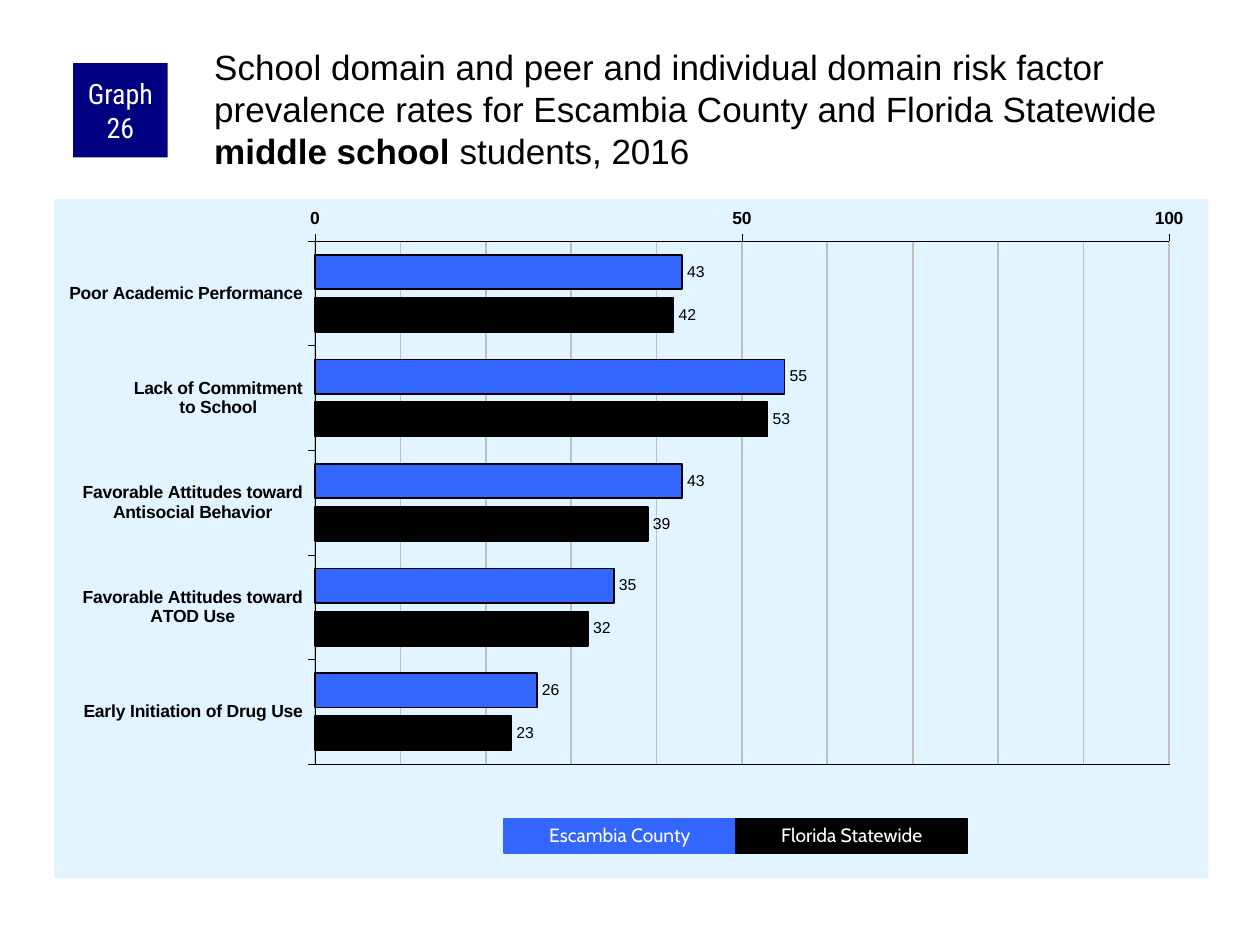
from copy import deepcopy

from pptx import Presentation
from pptx.chart.data import CategoryChartData
from pptx.dml.color import RGBColor
from pptx.enum.chart import XL_AXIS_CROSSES, XL_CHART_TYPE, XL_LABEL_POSITION, XL_TICK_MARK
from pptx.enum.shapes import MSO_SHAPE
from pptx.enum.text import MSO_ANCHOR, MSO_AUTO_SIZE, PP_ALIGN
from pptx.oxml import parse_xml
from pptx.oxml.ns import nsdecls, qn
from pptx.util import Inches, Pt

COLORS = {
    "county": "3366FF", "state": "000000", "panel": "E1F4FF", "badge": "000080",
    "grid": "C0C0C0", "ink": "000000", "light": "FFFFFF",
}
RISK_FACTORS = [
    "Poor Academic Performance",
    "Lack of Commitment\nto School",
    "Favorable Attitudes toward\nAntisocial Behavior",
    "Favorable Attitudes toward\nATOD Use",
    "Early Initiation of Drug Use",
]
GROUPS = [
    ("Escambia County", "county", (43, 55, 43, 35, 26)),
    ("Florida Statewide", "state", (42, 53, 39, 32, 23)),
]
PLOT_LAYOUT = {"x": 0.226, "y": 0.062, "w": 0.74, "h": 0.77}


def rgb(color):
    return RGBColor.from_string(COLORS[color])


def set_values(target, values):
    for attribute, value in values.items():
        setattr(target, attribute, value)


def style_font(font, size, name="Arial", color="ink", bold=False):
    set_values(font, {"size": Pt(size), "name": name, "bold": bold})
    font.color.rgb = rgb(color)


def style_line(line, color, width):
    line.color.rgb = rgb(color)
    line.width = Pt(width)


def area_format(fill, line):
    return parse_xml(f'<c:spPr {nsdecls("c", "a")}>{fill}<a:ln{line}</a:ln></c:spPr>')


def add_title(slide):
    title = slide.shapes.title
    set_values(title, {"left": Inches(1.67), "top": Inches(0.33),
                       "width": Inches(7.92), "height": Inches(0.83)})
    frame = title.text_frame
    set_values(frame, {
        "word_wrap": True, "auto_size": MSO_AUTO_SIZE.NONE, "vertical_anchor": MSO_ANCHOR.TOP,
        "margin_left": Inches(0.03), "margin_top": Inches(0.03),
        "margin_right": 0, "margin_bottom": 0,
    })
    paragraph = frame.paragraphs[0]
    paragraph.alignment = PP_ALIGN.LEFT
    for text, bold in (
        ("School domain and peer and individual domain risk factor prevalence rates "
         "for Escambia County and Florida Statewide ", False),
        ("middle school", True),
        (" students, 2016", False),
    ):
        run = paragraph.add_run()
        run.text = text
        style_font(run.font, 20, bold=bold)


def add_label_box(slide, text, box, fill, size, font, frame_format, spacing=None):
    label = slide.shapes.add_shape(MSO_SHAPE.RECTANGLE, *(Inches(v) for v in box))
    label.shadow.inherit = False
    label.fill.solid()
    label.fill.fore_color.rgb = rgb(fill)
    style_line(label.line, fill, 0.75)
    set_values(label.text_frame, {"word_wrap": True, "vertical_anchor": MSO_ANCHOR.MIDDLE,
                                  **frame_format})
    paragraph = label.text_frame.paragraphs[0]
    set_values(paragraph, {"alignment": PP_ALIGN.CENTER, "line_spacing": spacing})
    run = paragraph.add_run()
    run.text = text
    style_font(run.font, size, font, "light")
    return label


def style_axes(chart):
    for axis in (chart.category_axis, chart.value_axis):
        set_values(axis, {"major_tick_mark": XL_TICK_MARK.OUTSIDE,
                          "minor_tick_mark": XL_TICK_MARK.NONE})
        style_font(axis.tick_labels.font, 10, bold=True)
        style_line(axis.format.line, "ink", 0.25)
    set_values(chart.category_axis, {"reverse_order": True, "crosses": XL_AXIS_CROSSES.MAXIMUM})
    rates = chart.value_axis
    set_values(rates, {
        "minimum_scale": 0, "maximum_scale": 100, "major_unit": 50, "minor_unit": 10,
        "has_major_gridlines": True, "has_minor_gridlines": True,
    })
    style_line(rates.major_gridlines.format.line, "grid", 1)
    major, minor = (next(chart.element.iter(qn(tag)))
                    for tag in ("c:majorGridlines", "c:minorGridlines"))
    minor.append(deepcopy(major.find(qn("c:spPr"))))


def style_bars(chart):
    plot = chart.plots[0]
    set_values(plot, {"gap_width": 80, "overlap": -25, "vary_by_categories": False})
    for bars, (_, color, _) in zip(plot.series, GROUPS):
        bars.format.fill.solid()
        bars.format.fill.fore_color.rgb = rgb(color)
        bars.invert_if_negative = False
        style_line(bars.format.line, "ink", 1)
        labels = bars.data_labels
        set_values(labels, {"show_value": True, "position": XL_LABEL_POSITION.OUTSIDE_END})
        style_font(labels.font, 9)


def style_areas(chart):
    """Fill the chart panel, frame the plot and fix its inner position."""
    chart_body = chart.element.find(qn("c:chart"))
    panel = f'<a:solidFill><a:srgbClr val="{COLORS["panel"]}"/></a:solidFill>'
    chart_body.addnext(area_format(panel, "><a:noFill/>"))
    plot_area = chart_body.find(qn("c:plotArea"))
    frame = f' w="3175"><a:solidFill><a:srgbClr val="{COLORS["ink"]}"/></a:solidFill>'
    plot_area.append(area_format("<a:noFill/>", frame))
    for default_layout in plot_area.findall(qn("c:layout")):
        plot_area.remove(default_layout)
    modes = '<c:xMode val="edge"/><c:yMode val="edge"/>'
    sizes = "".join(f'<c:{key} val="{value}"/>' for key, value in PLOT_LAYOUT.items())
    plot_area.insert(0, parse_xml(
        f'<c:layout {nsdecls("c")}><c:manualLayout><c:layoutTarget val="inner"/>'
        f'{modes}{sizes}</c:manualLayout></c:layout>'))


def add_rate_chart(slide):
    rates = CategoryChartData()
    rates.categories = RISK_FACTORS
    for name, _, values in GROUPS:
        rates.add_series(name, values)
    chart = slide.shapes.add_chart(
        XL_CHART_TYPE.BAR_CLUSTERED, Inches(0.43), Inches(1.58),
        Inches(9.16), Inches(5.39), rates).chart
    set_values(chart, {"has_title": False, "has_legend": False})
    style_font(chart.font, 11.8)
    style_axes(chart)
    style_bars(chart)
    style_areas(chart)


def add_legend(slide):
    width = 1.84
    for index, (name, color, _) in enumerate(GROUPS):
        add_label_box(slide, name, (4 + index * width, 6.5, width, 0.27), color, 11, "Cabin",
                      {"auto_size": MSO_AUTO_SIZE.SHAPE_TO_FIT_TEXT}, spacing=0.9)


def main():
    presentation = Presentation()
    set_values(presentation, {"slide_width": Inches(10), "slide_height": Inches(7.5)})
    slide = presentation.slides.add_slide(presentation.slide_layouts[5])
    add_rate_chart(slide)
    badge = add_label_box(slide, "Graph 26", (0.58, 0.5, 0.75, 0.75), "badge", 16,
                          "Roboto Condensed",
                          {"margin_left": Inches(0.05), "margin_right": Inches(0.05),
                           "margin_top": 0, "margin_bottom": 0})
    badge.line.fill.background()
    add_title(slide)
    add_legend(slide)
    presentation.save("out.pptx")


if __name__ == "__main__":
    main()
